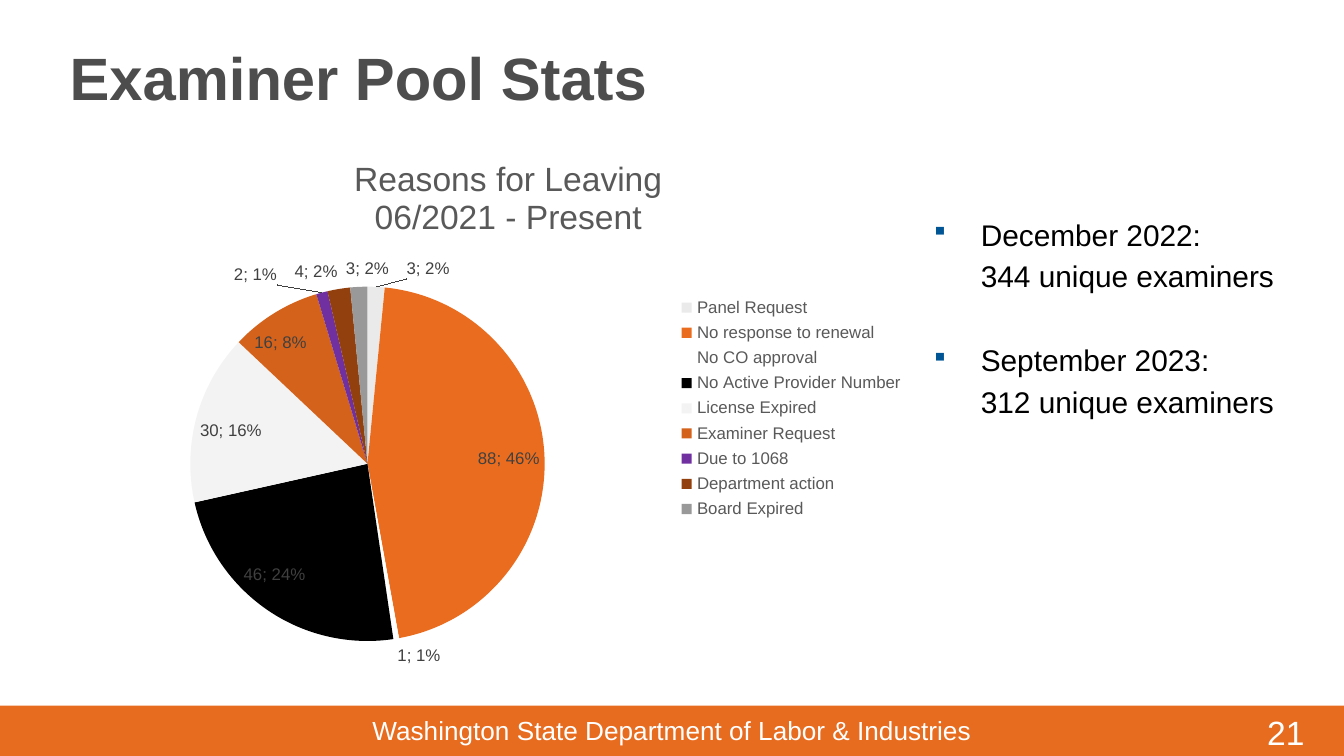
from pptx import Presentation, util as u
from pptx.chart.data import CategoryChartData
from pptx.dml.color import RGBColor
from pptx.enum import chart as charts, shapes, text
from pptx.oxml import parse_xml
from pptx.oxml.ns import nsdecls, qn

Inches, Pt = u.Inches, u.Pt


def style(font, size, color, bold=False):
    font.name = "Arial"
    font.size = Pt(size)
    font.bold = bold
    font.color.rgb = RGBColor.from_string(color)


def place(element, index, **values):
    for old in element.findall(qn("c:layout")):
        element.remove(old)
    modes = "".join(f'<c:{axis}Mode val="edge"/>' for axis in "xy")
    sizes = "".join(f'<c:{key} val="{value}"/>' for key, value in values.items())
    target = '<c:layoutTarget val="inner"/>' if index == 0 else ""
    element.insert(index, parse_xml(
        f'<c:layout {nsdecls("c")}><c:manualLayout>{target}{modes}{sizes}'
        '</c:manualLayout></c:layout>'))


deck = Presentation()
deck.slide_width, deck.slide_height = Inches(10), Inches(10 * 9 / 16)
page = deck.slides.add_slide(deck.slide_layouts[6])

footer = page.shapes.add_shape(
    shapes.MSO_SHAPE.RECTANGLE, Inches(0), Inches(5.25), Inches(10), Inches(0.38))
footer.shadow.inherit = False
footer.fill.solid()
footer.fill.fore_color.rgb = RGBColor.from_string("E86C1F")
footer.line.fill.background()

left, center = text.PP_ALIGN.LEFT, text.PP_ALIGN.CENTER
top, middle = text.MSO_ANCHOR.TOP, text.MSO_ANCHOR.MIDDLE
labels = [
    ("21", 9.33, 5.25, 0.58, 0.4, 18, "FFFFFF", False, left, top),
    ("Washington State Department of Labor & Industries",
     0, 5.27, 10, 0.34, 14, "FFFFFF", False, center, top),
    ("Examiner Pool Stats", 0.42, 0.31, 9.17, 0.52, 32, "4D4D4D", True, left, middle),
]
for words, x, y, width, height, size, color, bold, align, anchor in labels:
    box = page.shapes.add_textbox(Inches(x), Inches(y), Inches(width), Inches(height))
    box.text_frame.word_wrap = True
    box.text_frame.vertical_anchor = anchor
    para = box.text_frame.paragraphs[0]
    para.alignment = align
    span = para.add_run()
    span.text = words
    style(span.font, size, color, bold)

box = page.shapes.add_textbox(Inches(6.83), Inches(0.31), Inches(2.83), Inches(4.69))
counts = box.text_frame
counts.word_wrap = True
counts.margin_top = Inches(1.3)
lines = [
    ("December 2022:", True, 0),
    ("344 unique examiners", False, 3.2),
    ("September 2023:", True, 25.6),
    ("312 unique examiners", False, 3.2),
]
for number, (words, bullet, gap) in enumerate(lines):
    para = counts.add_paragraph() if number else counts.paragraphs[0]
    para.space_before = Pt(gap)
    properties = para._p.get_or_add_pPr()
    properties.set("marL", str(Inches(0.37)))
    properties.set("indent", str(Inches(-0.37) if bullet else 0))
    if bullet:
        for mark in (
            f'<a:buClr {nsdecls("a")}><a:srgbClr val="005595"/></a:buClr>',
            f'<a:buSzPct {nsdecls("a")} val="80000"/>',
            f'<a:buChar {nsdecls("a")} char="▪"/>',
        ):
            properties.append(parse_xml(mark))
    span = para.add_run()
    span.text = words
    style(span.font, 16, "000000")

reasons = [
    ("Panel Request", 3, "EAEAEA"),
    ("No response to renewal", 88, "EA6D1F"),
    ("No CO approval", 1, "FFFFFF"),
    ("No Active Provider Number", 46, "000000"),
    ("License Expired", 30, "F3F3F3"),
    ("Examiner Request", 16, "D4621B"),
    ("Due to 1068", 2, "7030A0"),
    ("Department action", 4, "91400E"),
    ("Board Expired", 3, "999999"),
]
data = CategoryChartData()
data.categories = [name for name, value, color in reasons]
data.add_series("Series 1", [value for name, value, color in reasons])
chart = page.shapes.add_chart(
    charts.XL_CHART_TYPE.PIE, Inches(0.33), Inches(0.98), Inches(6.5), Inches(4.12),
    data).chart
style(chart.font, 10, "000000")

chart.has_title = True
heading = chart.chart_title.text_frame
for number, words in enumerate(["Reasons for Leaving", "06/2021 - Present"]):
    para = heading.add_paragraph() if number else heading.paragraphs[0]
    span = para.add_run()
    span.text = words
    style(span.font, 18, "595959")

chart.has_legend = True
chart.legend.position = charts.XL_LEGEND_POSITION.RIGHT
chart.legend.include_in_layout = False
style(chart.legend.font, 9, "595959")

plot = chart.plots[0]
plot.vary_by_categories = True
series = plot.series[0]
for number, (name, value, color) in enumerate(reasons):
    fill = series.points[number].format.fill
    fill.solid()
    fill.fore_color.rgb = RGBColor.from_string(color)

tags = series.data_labels
tags.show_value = True
tags.show_percentage = True
tags.position = charts.XL_LABEL_POSITION.BEST_FIT
style(tags.font, 9, "404040")
chart.element.xpath(".//c:ser/c:dLbls/c:showBubbleSize")[0].addnext(
    parse_xml(f'<c:separator {nsdecls("c")}>; </c:separator>'))

place(chart.element.xpath("c:chart/c:title")[0], 1, x=0.35, y=0.04)
place(chart.element.xpath("c:chart/c:plotArea")[0], 0, x=0.16, y=0.28, w=0.42, h=0.64)
place(chart.element.xpath("c:chart/c:legend")[0], 1, x=0.72, y=0.29, w=0.27, h=0.42)

deck.save("out.pptx")
